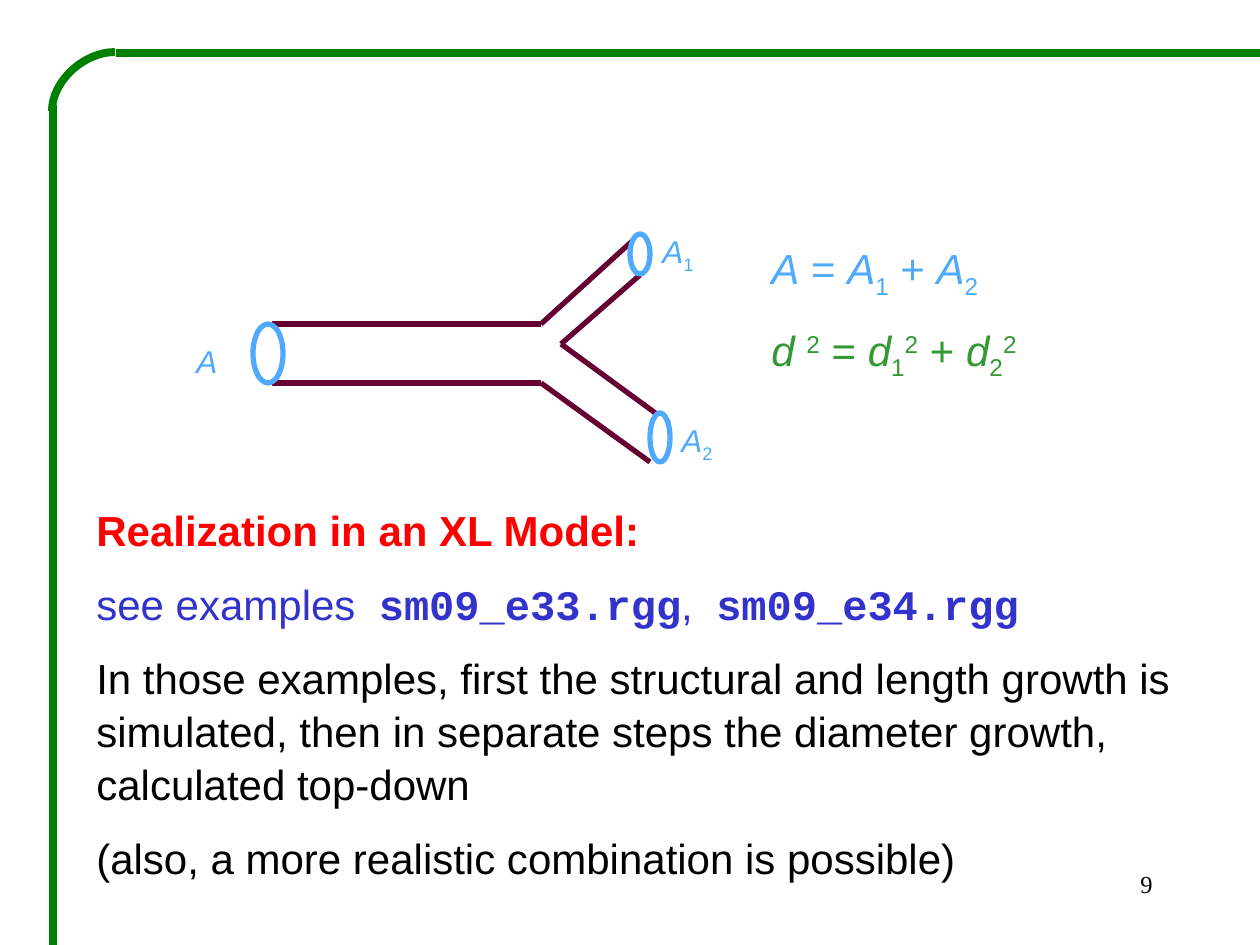
from pptx import Presentation
from pptx.dml.color import RGBColor
from pptx.enum.shapes import MSO_CONNECTOR, MSO_SHAPE
from pptx.enum.text import PP_ALIGN
from pptx.oxml.ns import qn
from pptx.util import Emu, Pt
from lxml.etree import SubElement

GREEN, WINE, SKY = "008000", "660033", "4FAAFD"
LEAF, RED, BLUE, BLACK = "339933", "FF0000", "3333CC", "000000"

# Branch outline: x1, y1, x2, y2
EDGES = [
    (272, 383, 541, 383), (272, 324, 541, 324),
    (541, 324, 640, 234), (561, 344, 640, 275),
    (541, 383, 650, 462), (561, 344, 669, 423),
]
# Cross sections: x, y, width, height
RINGS = [(253, 324, 30, 59), (650, 413, 20, 49), (630, 234, 20, 40)]
FRAME = [(1260, 53, 116, 53), (53, 105, 53, 945)]

# Runs are (text, style); paragraphs are (colour, runs)
AREA = [("A", "i"), (" = ", ""), ("A", "i"), ("1", "sub"),
        (" + ", ""), ("A", "i"), ("2", "sub")]
DIAM = [("d ", "i"), ("2", "sup"), (" = ", ""),
        ("d", "i"), ("1", "sub"), ("2", "sup"), (" + ", ""),
        ("d", "i"), ("2", "sub"), ("2", "sup")]
BODY = [
    (RED, [("Realization in an XL Model:", "b")]),
    (BLUE, [("see examples  ", ""), ("sm09_e33.rgg", "code"),
            (",  ", ""), ("sm09_e34.rgg", "code")]),
    (BLACK, [("In those examples, first the structural and length growth is "
              "simulated, then in separate steps the diameter growth, "
              "calculated top-down", "")]),
    (BLACK, [("(also, a more realistic combination is possible)", "")]),
]
# Text boxes: place, size, paragraphs
TEXTS = [
    ((759, 234, 297, 140), 24, [(SKY, AREA), (LEAF, DIAM)]),
    ((184, 334, 49, 50), 18, [(SKY, [("A", "i")])]),
    ((650, 224, 69, 50), 18, [(SKY, [("A", "i"), ("1", "sub")])]),
    ((669, 413, 69, 50), 18, [(SKY, [("A", "i"), ("2", "sub")])]),
    ((84, 496, 1121, 422), 24, BODY),
]
SHIFT = {"sub": "-25000", "sup": "30000"}


def px(*vals):
    return [Emu(round(v * 914400 / 126)) for v in vals]


def rgb(code):
    return RGBColor.from_string(code)


def add_line(ends, color, width, kind=MSO_CONNECTOR.STRAIGHT):
    line = slide.shapes.add_connector(kind, *px(*ends))
    line.line.color.rgb = rgb(color)
    line.line.width = Pt(width)
    SubElement(line._element.spPr, qn("a:effectLst"))
    return line


def add_ring(place):
    ring = slide.shapes.add_shape(MSO_SHAPE.OVAL, *px(*place))
    ring.shadow.inherit = False
    ring.fill.solid()
    ring.fill.fore_color.rgb = rgb("FFFFFF")
    ring.line.color.rgb = rgb(SKY)
    ring.line.width = Pt(3)


def add_run(para, text, style, size, color, face):
    run = para.add_run()
    run.text = text
    font = run.font
    font.name = "Courier New" if style == "code" else face
    font.size = Pt(size)
    font.color.rgb = rgb(color)
    font.bold = style in ("b", "code")
    font.italic = style == "i"
    if style in SHIFT:
        run._r.get_or_add_rPr().set("baseline", SHIFT[style])


def add_text(place, size, paras, face="Arial"):
    frame = slide.shapes.add_textbox(*px(*place)).text_frame
    frame.word_wrap = True
    for i, (color, runs) in enumerate(paras):
        para = frame.add_paragraph() if i else frame.paragraphs[0]
        para.line_spacing = 1.05
        para.space_before = Pt(size / 2 if i else 0)
        for text, style in runs:
            add_run(para, text, style, size, color, face)
    return frame


deck = Presentation()
deck.slide_width, deck.slide_height = px(1260, 945)
slide = deck.slides.add_slide(deck.slide_layouts[6])

# Green frame with its rounded corner
for ends in FRAME:
    add_line(ends, GREEN, 4.5)
curve = add_line((54, 50, 113, 113), GREEN, 4.5, MSO_CONNECTOR.CURVE)
shape = curve._element.spPr
shape.find(qn("a:prstGeom")).set("prst", "curvedConnector2")
shape.find(qn("a:xfrm")).set("rot", str(270 * 60000))

# Branching pipe
for ends in EDGES:
    add_line(ends, WINE, 3)
for place in RINGS:
    add_ring(place)

# Labels, formulas and body
for place, size, paras in TEXTS:
    add_text(place, size, paras)

# Page number
page = add_text((903, 861, 262, 63), 14, [(BLACK, [("9", "")])],
                "Times New Roman")
page.paragraphs[0].alignment = PP_ALIGN.RIGHT

deck.save("out.pptx")
